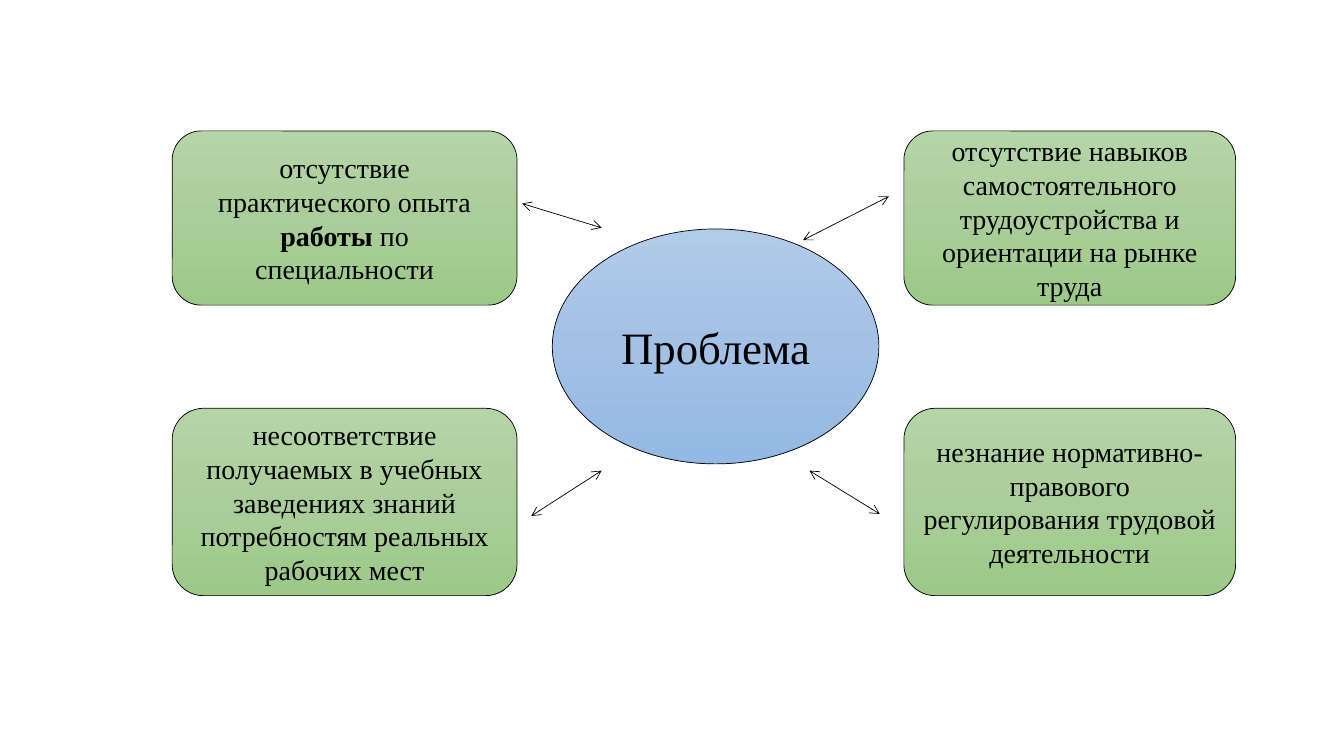
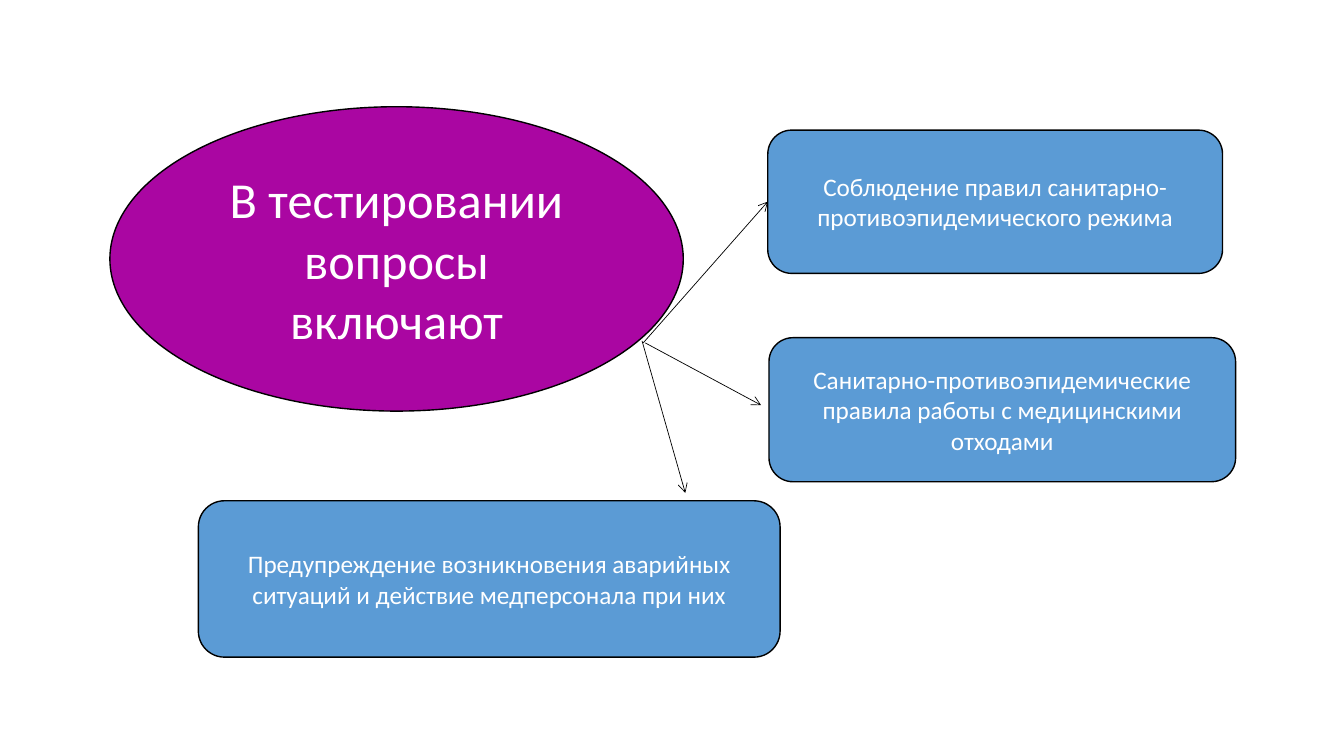
from copy import deepcopy
from dataclasses import dataclass

from lxml.etree import SubElement as Sub
from pptx import Presentation as Deck
from pptx.dml.color import RGBColor as Rgb
from pptx.enum.shapes import MSO_CONNECTOR as Link, MSO_SHAPE as Form
from pptx.enum.text import MSO_ANCHOR as Anchor, PP_ALIGN as Align
from pptx.oxml.ns import qn
from pptx.util import Cm, Pt


@dataclass(frozen=True)
class Theme:
    black: str = "000000"
    white: str = "FFFFFF"
    blue: tuple = ("B1CBE9", "A3C1E5", "93B9E4")
    green: tuple = ("B5D5A7", "AACE9A", "9CC987")
    plum: tuple = ("AA06A2",)
    azure: tuple = ("5B9BD5",)
    serif: str = "Times New Roman"
    sans: str = "Calibri"
    huge: int = 36
    large: int = 32
    body: int = 20
    small: int = 18
    thin: float = 0.5
    thick: float = 1


@dataclass(frozen=True)
class Look:
    fill: tuple
    ink: str
    font: str
    size: int
    edge: float


class Board:
    def __init__(self, deck, theme):
        self.theme = theme
        self.deck = deck
        self.slide = None

    def page(self):
        self.slide = self.deck.slides.add_slide(self.deck.slide_layouts[6])

    def paint(self, shape, tones):
        fill = shape.fill
        if len(tones) == 1:
            fill.solid()
            fill.fore_color.rgb = Rgb.from_string(tones[0])
            return
        fill.gradient()
        fill.gradient_angle = 270
        stops = next(shape.element.iter(qn("a:gsLst")))
        while len(stops) < len(tones):
            stops.append(deepcopy(stops[0]))
        for i, (stop, tone) in enumerate(zip(fill.gradient_stops, tones)):
            stop.position = i / (len(tones) - 1)
            stop.color.rgb = Rgb.from_string(tone)

    def stroke(self, line, width):
        line.color.rgb = Rgb.from_string(self.theme.black)
        line.width = Pt(width)

    def node(self, form, spot, look, *runs):
        shape = self.slide.shapes.add_shape(form, *map(Cm, spot))
        shape.shadow.inherit = False
        self.paint(shape, look.fill)
        self.stroke(shape.line, look.edge)
        frame = shape.text_frame
        frame.word_wrap = True
        frame.vertical_anchor = Anchor.MIDDLE
        para = frame.paragraphs[0]
        para.alignment = Align.CENTER
        for text, bold in runs:
            run = para.add_run()
            run.text = text
            font = run.font
            font.name, font.size, font.bold = look.font, Pt(look.size), bold
            font.color.rgb = Rgb.from_string(look.ink)

    def oval(self, spot, look, text):
        self.node(Form.OVAL, spot, look, (text, False))

    def card(self, spot, look, *runs):
        self.node(Form.ROUNDED_RECTANGLE, spot, look, *runs)

    def arrow(self, ends, both=False):
        link = self.slide.shapes.add_connector(Link.STRAIGHT, *map(Cm, ends))
        self.stroke(link.line, self.theme.thin)
        props = link.element.spPr
        pen = props.find(qn("a:ln"))
        for tag in ("a:headEnd", "a:tailEnd") if both else ("a:tailEnd",):
            Sub(pen, qn(tag), type="arrow")
        Sub(props, qn("a:effectLst"))


def causes(board):
    t = board.theme
    board.page()
    hub = Look(t.blue, t.black, t.serif, t.large, t.thin)
    look = Look(t.green, t.black, t.serif, t.body, t.thin)
    board.oval((13.92, 5.77, 8.23, 5.92), hub, "Проблема")
    cols = ((4.34, 8.69), (22.78, 8.36))
    rows = ((3.3, 4.39), (10.29, 4.72))
    texts = (
        (
            (("отсутствие практического опыта ", False), ("работы", True),
             (" по специальности", False)),
            (("отсутствие навыков самостоятельного трудоустройства "
              "и ориентации на рынке труда", False),),
        ),
        (
            (("несоответствие получаемых в учебных заведениях знаний "
              "потребностям реальных рабочих мест", False),),
            (("незнание нормативно-правового регулирования "
              "трудовой деятельности", False),),
        ),
    )
    for (top, high), line in zip(rows, texts):
        for (left, wide), runs in zip(cols, line):
            board.card((left, top, wide, high), look, *runs)
    for ends in (
        (20.24, 6.05, 22.4, 4.95),
        (13.16, 5.13, 15.16, 5.74),
        (13.39, 13, 15.16, 11.86),
        (20.4, 11.86, 22.17, 12.95),
    ):
        board.arrow(ends, both=True)


def topics(board):
    t = board.theme
    board.page()
    hub = Look(t.plum, t.white, t.sans, t.huge, t.thick)
    look = Look(t.azure, t.white, t.sans, t.small, t.thick)
    board.oval((2.77, 2.69, 14.45, 7.67), hub, "В тестировании вопросы включают")
    for spot, ends, text in (
        ((19.35, 3.28, 11.46, 3.61), (16.21, 8.64, 19.35, 5.08),
         "Соблюдение правил санитарно-противоэпидемического режима"),
        ((19.38, 8.51, 11.76, 3.63), (16.26, 8.64, 19.18, 10.21),
         "Санитарно-противоэпидемические правила работы "
         "с медицинскими отходами"),
        ((5, 12.62, 14.66, 3.94), (16.18, 8.59, 17.27, 12.42),
         "Предупреждение возникновения аварийных ситуаций "
         "и действие медперсонала при них"),
    ):
        board.card(spot, look, (text, False))
        board.arrow(ends)


def main():
    deck = Deck()
    deck.slide_width, deck.slide_height = Cm(33.87), Cm(19.05)
    board = Board(deck, Theme())
    causes(board)
    topics(board)
    deck.save("out.pptx")


if __name__ == "__main__":
    main()
